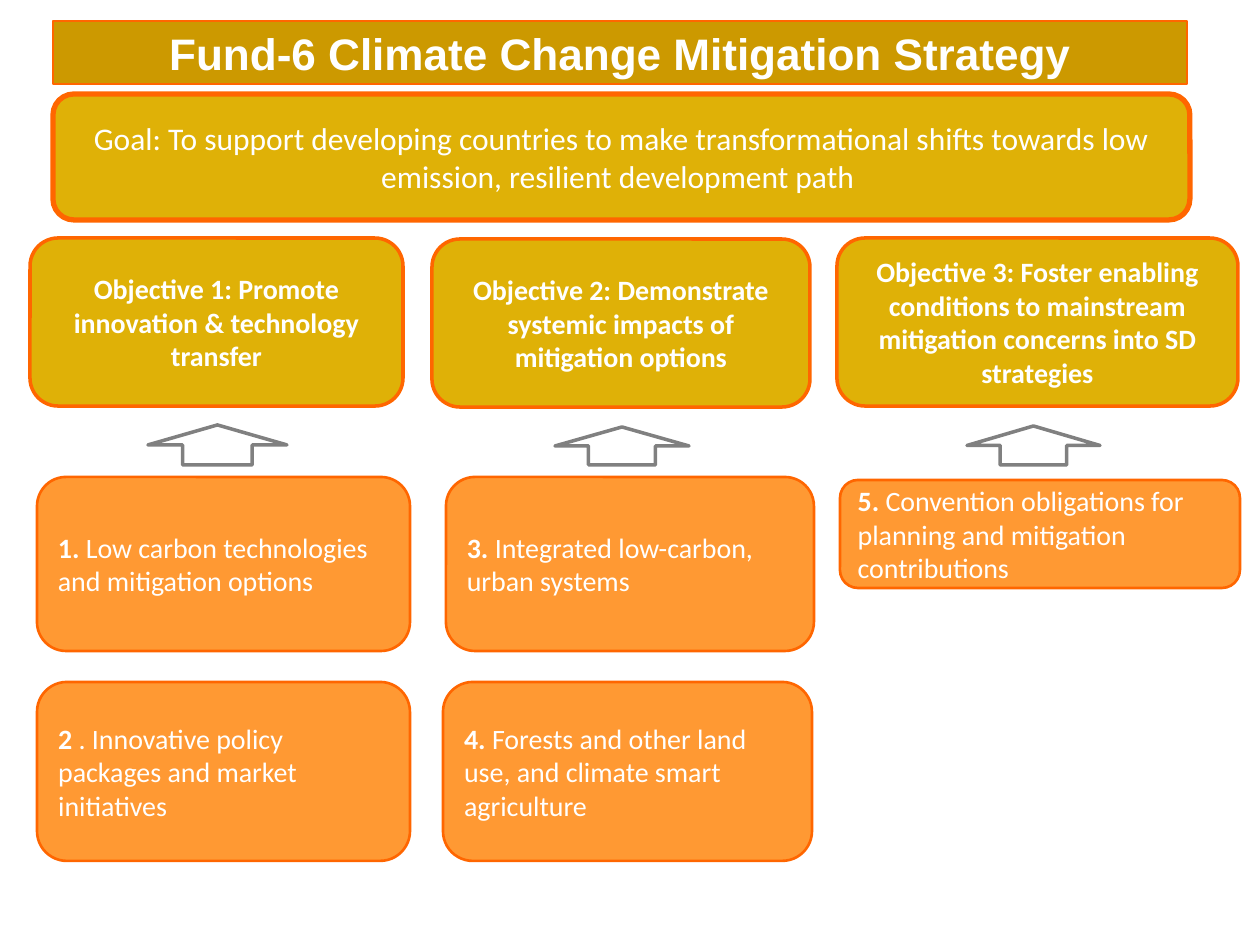
from pptx import Presentation
from pptx.dml.color import RGBColor
from pptx.enum.shapes import MSO_SHAPE
from pptx.enum.text import MSO_ANCHOR, MSO_AUTO_SIZE, PP_ALIGN
from pptx.util import Emu, Pt

ROUND, UP_ARROW = MSO_SHAPE.ROUNDED_RECTANGLE, MSO_SHAPE.UP_ARROW
MIDDLE, NO_FIT = MSO_ANCHOR.MIDDLE, MSO_AUTO_SIZE.NONE
LEFT, CENTER = PP_ALIGN.LEFT, PP_ALIGN.CENTER

PX_PER_INCH = 126
TITLE_ONLY = 5
COLORS = {
    "title": "CC9900",
    "gold": "DFB107",
    "orange": "FF9933",
    "border": "FF6600",
    "white": "FFFFFF",
    "grey": "808080",
}


def px(n):
    return Emu(round(n * 914400 / PX_PER_INCH))


def rgb(name):
    return RGBColor.from_string(COLORS[name])


def write(shape, text, lead="", size=16, font="Calibri", bold=False, align=CENTER):
    """Fill a shape with one paragraph, opened by an optional bold lead."""
    tf = shape.text_frame
    tf.word_wrap = True
    tf.auto_size = NO_FIT
    tf.vertical_anchor = MIDDLE
    p = tf.paragraphs[0]
    p.alignment = align
    for part, is_bold in ((lead, True), (text, bold)):
        if part:
            r = p.add_run()
            r.text = part
            r.font.name = font
            r.font.size = Pt(size)
            r.font.bold = is_bold
            r.font.color.rgb = rgb("white")


class StrategySlide:
    def __init__(self, prs):
        self.s = prs.slides.add_slide(prs.slide_layouts[TITLE_ONLY])

    def paint(self, sp, fill, line, width):
        sp.fill.solid()
        sp.fill.fore_color.rgb = rgb(fill)
        sp.line.color.rgb = rgb(line)
        sp.line.width = Pt(width)

    def title(self, text, x, y, w, h):
        sp = self.s.shapes.title
        sp.left, sp.top, sp.width, sp.height = map(px, (x, y, w, h))
        self.paint(sp, "title", "border", 0.75)
        write(sp, text, size=25.2, font="Arial", bold=True)

    def shape(self, kind, box, fill, line, width):
        sp = self.s.shapes.add_shape(kind, *map(px, box))
        sp.shadow.inherit = False
        self.paint(sp, fill, line, width)
        return sp

    def goal(self, text, *box):
        write(self.shape(ROUND, box, "gold", "border", 3), text, size=18)

    def objective(self, text, *box):
        write(self.shape(ROUND, box, "gold", "border", 2), text, bold=True)

    def program(self, lead, text, *box):
        sp = self.shape(ROUND, box, "orange", "border", 1.5)
        write(sp, text, lead=lead, align=LEFT)

    def arrow(self, *box):
        self.shape(UP_ARROW, box, "white", "grey", 2)


OBJECTIVES = [
    ("Objective 1: Promote innovation & technology transfer", 30, 238, 373, 168),
    ("Objective 2: Demonstrate systemic impacts of mitigation options", 432, 239, 378, 168),
    ("Objective 3: Foster enabling conditions to mainstream mitigation concerns "
     "into SD strategies", 837, 238, 401, 168),
]
PROGRAMS = [
    ("1. ", "Low carbon technologies and mitigation options", 37, 477, 373, 174),
    ("2 ", ". Innovative policy packages and market initiatives", 37, 682, 373, 179),
    ("3. ", "Integrated low-carbon, urban systems", 446, 477, 368, 174),
    ("4. ", "Forests and other land use, and climate smart agriculture", 443, 682, 369, 179),
    ("5. ", "Convention obligations for planning and mitigation contributions",
     840, 480, 400, 108),
]
ARROWS = [(148, 425, 139, 40), (555, 427, 134, 38), (967, 426, 133, 39)]


def main():
    prs = Presentation()
    prs.slide_width, prs.slide_height = px(1260), px(945)
    slide = StrategySlide(prs)

    # Title and overall goal
    slide.title("Fund-6 Climate Change Mitigation Strategy", 53, 21, 1134, 63)
    slide.goal("Goal: To support developing countries to make transformational shifts "
               "towards low emission, resilient development path ", 53, 94, 1137, 126)

    # Objectives, the programs below them, and the arrows between
    for item in OBJECTIVES:
        slide.objective(*item)
    for item in PROGRAMS:
        slide.program(*item)
    for box in ARROWS:
        slide.arrow(*box)

    prs.save("out.pptx")


if __name__ == "__main__":
    main()
